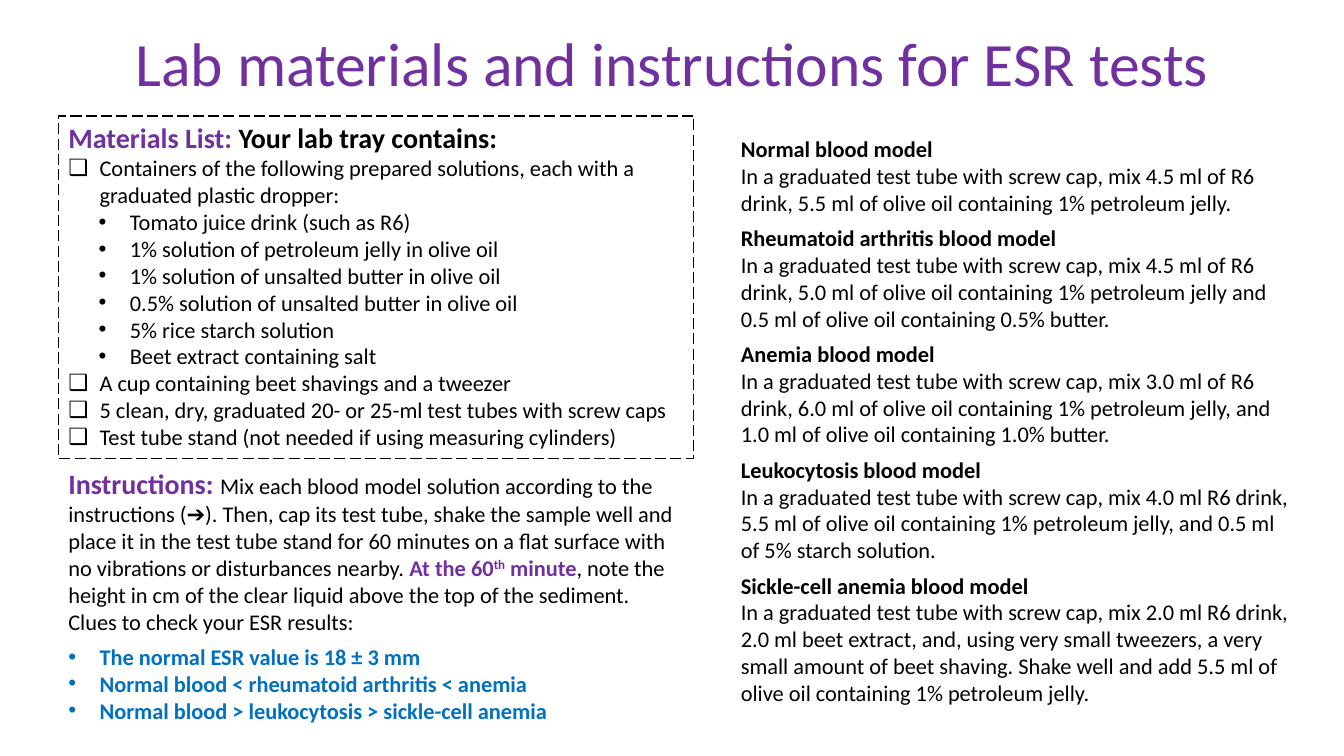
"""Build a slide with lab materials and instructions for ESR tests."""
from lxml.etree import SubElement
from pptx import Presentation
from pptx.dml.color import RGBColor
from pptx.enum.dml import MSO_LINE_DASH_STYLE as Dash
from pptx.enum.shapes import MSO_SHAPE as Shape
from pptx.enum.text import MSO_ANCHOR as Anchor, PP_ALIGN as Align
from pptx.oxml.ns import qn
from pptx.util import Inches, Pt

PURPLE = RGBColor(0x70, 0x30, 0xA0)
BLUE = RGBColor(0x00, 0x70, 0xC0)
BLACK = RGBColor(0, 0, 0)
WHITE = RGBColor(255, 255, 255)

LEFT, COLUMN_WIDTH = 0.58, 6.3
INDENT = 0.31
BODY = {"name": "Calibri", "size": Pt(16), "bold": False, "color": BLACK}
STRONG = BODY | {"bold": True}
ACCENT = STRONG | {"color": PURPLE}
HEADING = ACCENT | {"size": Pt(20)}
CLUE = STRONG | {"color": BLUE}
TITLE = BODY | {"size": Pt(44), "color": PURPLE}

presentation = Presentation()
presentation.slide_width = Inches(13.33)
presentation.slide_height = Inches(7.5)
slide = presentation.slides.add_slide(presentation.slide_layouts[6])


def add_panel(left, top, width, height, fill=None):
    """Add a plain rectangle for left-aligned text."""
    shape = slide.shapes.add_shape(
        Shape.RECTANGLE, Inches(left), Inches(top), Inches(width), Inches(height))
    shape.shadow.inherit = False
    shape.line.fill.background()
    if fill is None:
        shape.fill.background()
    else:
        shape.fill.solid()
        shape.fill.fore_color.rgb = fill
    shape.text_frame.word_wrap = True
    shape.text_frame.vertical_anchor = Anchor.TOP
    return shape


def add_paragraph(shape, runs, bullet=None, level=0, after=0, align=Align.LEFT):
    """Add a paragraph of (text, format) runs, with an optional bullet."""
    frame = shape.text_frame
    paragraph = frame.paragraphs[0]
    if paragraph.runs:
        paragraph = frame.add_paragraph()
    paragraph.alignment = align
    paragraph.level = level
    paragraph.space_after = Pt(after)
    for text, style in runs:
        run = paragraph.add_run()
        run.text = text
        for key, value in style.items():
            if key == "color":
                run.font.color.rgb = value
            elif key == "baseline":
                run.font._element.set(key, value)
            else:
                setattr(run.font, key, value)
    if bullet:
        properties = paragraph._p.get_or_add_pPr()
        properties.set("marL", str(Inches(INDENT + 0.3 * level)))
        properties.set("indent", str(-Inches(INDENT)))
        SubElement(properties, qn("a:buFont")).set("typeface", "Arial")
        SubElement(properties, qn("a:buChar")).set("char", bullet)
    return paragraph


title = add_panel(0.67, 0.36, 12, 0.6)
title.text_frame.vertical_anchor = Anchor.MIDDLE
add_paragraph(title, [("Lab materials and instructions for ESR tests", TITLE)],
              align=Align.CENTER).line_spacing = 0.9

instructions = add_panel(LEFT, 4.58, COLUMN_WIDTH, 2.7, WHITE)
add_paragraph(instructions, [
    ("Instructions: ", HEADING),
    ("Mix each blood model solution according to the instructions (➔). Then, cap its "
     "test tube, shake the sample well and place it in the test tube stand for 60 minutes "
     "on a flat surface with no vibrations or disturbances nearby. ", BODY),
    ("At the 60", ACCENT),
    ("th", ACCENT | {"baseline": "30000"}),
    (" minute", ACCENT),
    (", note the height in cm of the clear liquid above the top of the sediment. "
     "Clues to check your ESR results:", BODY),
], after=6)
for clue in ("The normal ESR value is 18 ± 3 mm",
             "Normal blood < rheumatoid arthritis < anemia",
             "Normal blood > leukocytosis > sickle-cell anemia"):
    add_paragraph(instructions, [(clue, CLUE)], bullet="•")

MODELS = {
    "Normal": "4.5 ml of R6 drink, 5.5 ml of olive oil containing 1% petroleum jelly.",
    "Rheumatoid arthritis": "4.5 ml of R6 drink, 5.0 ml of olive oil containing 1% petroleum "
                            "jelly and 0.5 ml of olive oil containing 0.5% butter.",
    "Anemia": "3.0 ml of R6 drink, 6.0 ml of olive oil containing 1% petroleum jelly, "
              "and 1.0 ml of olive oil containing 1.0% butter.",
    "Leukocytosis": "4.0 ml R6 drink, 5.5 ml of olive oil containing 1% petroleum jelly, "
                    "and 0.5 ml of 5% starch solution.",
    "Sickle-cell anemia": "2.0 ml R6 drink, 2.0 ml beet extract, and, using very small "
                          "tweezers, a very small amount of beet shaving. Shake well and add "
                          "5.5 ml of olive oil containing 1% petroleum jelly.",
}
recipes = add_panel(7.25, 1.29, 5.7, 5.99, WHITE)
for model, mixture in MODELS.items():
    add_paragraph(recipes, [(f"{model} blood model", STRONG)])
    add_paragraph(recipes, [
        (f"In a graduated test tube with screw cap, mix {mixture}", BODY)], after=6)

MATERIALS = (
    (0, "Containers of the following prepared solutions, each with a graduated plastic dropper:"),
    (1, "Tomato juice drink (such as R6)"),
    (1, "1% solution of petroleum jelly in olive oil"),
    (1, "1% solution of unsalted butter in olive oil"),
    (1, "0.5% solution of unsalted butter in olive oil"),
    (1, "5% rice starch solution"),
    (1, "Beet extract containing salt"),
    (0, "A cup containing beet shavings and a tweezer"),
    (0, "5 clean, dry, graduated 20- or 25-ml test tubes with screw caps"),
    (0, "Test tube stand (not needed if using measuring cylinders)"),
)
materials = add_panel(LEFT, 1.15, COLUMN_WIDTH, 3.4)
materials.line.color.rgb = BLACK
materials.line.width = Pt(1)
materials.line.dash_style = Dash.LONG_DASH
add_paragraph(materials, [("Materials List: ", HEADING),
                          ("Your lab tray contains:", HEADING | {"color": BLACK})])
for level, item in MATERIALS:
    add_paragraph(materials, [(item, BODY)], bullet="❑•"[level], level=level)

presentation.save("out.pptx")
